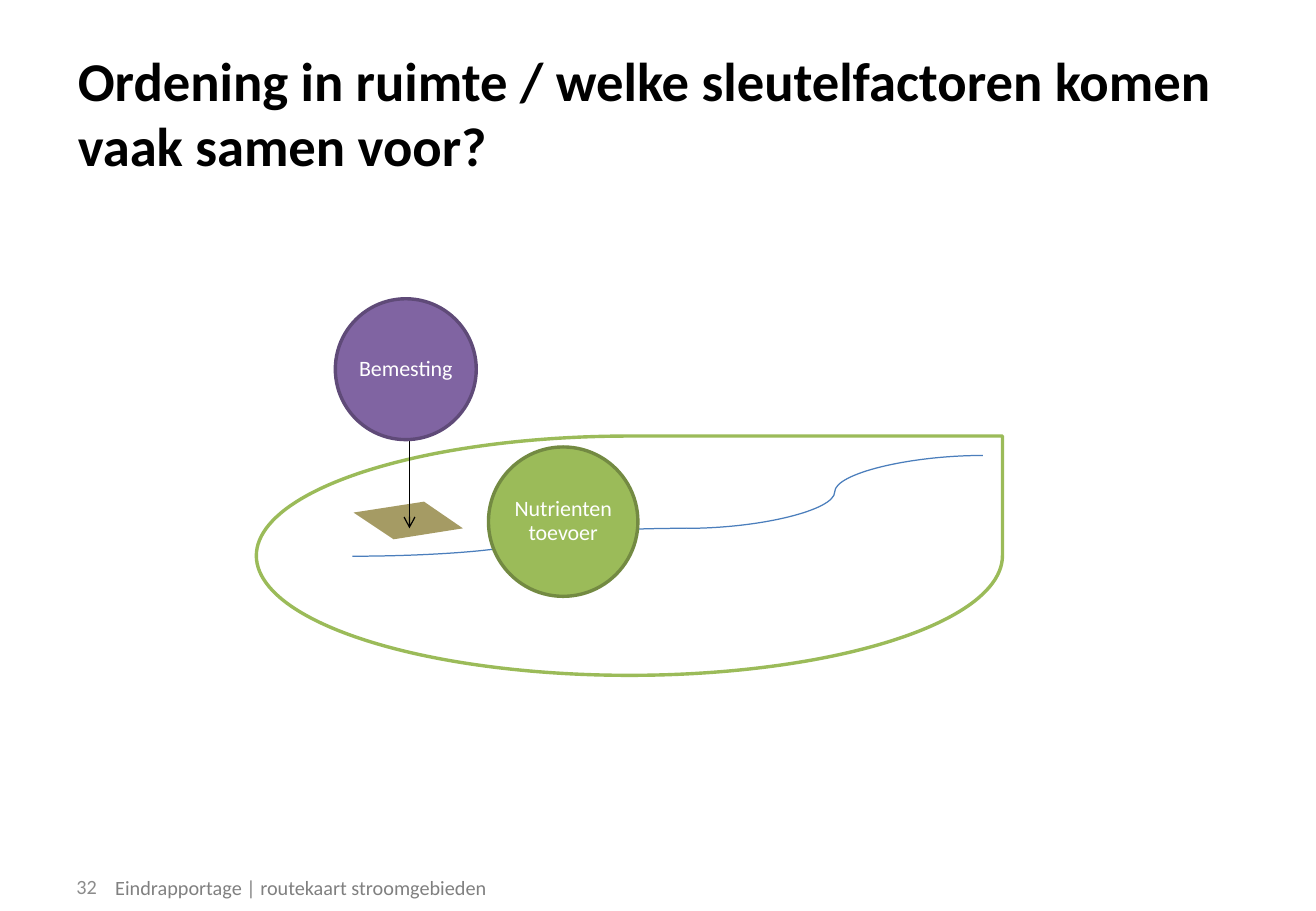
"""Build the slide on which key factors occur together in a catchment."""
from dataclasses import dataclass
from typing import Optional

from lxml.etree import SubElement
from pptx import Presentation
from pptx.dml.color import RGBColor
from pptx.enum.shapes import MSO_CONNECTOR, MSO_SHAPE
from pptx.enum.text import MSO_ANCHOR, MSO_AUTO_SIZE, PP_ALIGN
from pptx.oxml.ns import qn
from pptx.shapes.autoshape import Shape
from pptx.slide import Slide
from pptx.text.text import TextFrame
from pptx.util import Inches, Pt


@dataclass(frozen=True)
class Theme:
    font: str = "Calibri"
    head: float = 32.4
    label: float = 13
    small: float = 12
    thick: float = 2
    thin: float = 0.75
    black: str = "000000"
    white: str = "FFFFFF"
    green: str = "9BBB59"
    moss: str = "738A42"
    purple: str = "8064A2"
    plum: str = "5F4A78"
    blue: str = "4B7EBC"
    soil: str = "A59B64"
    gray: str = "808080"
    pale: str = "8C8C8C"


THEME = Theme()


@dataclass(frozen=True)
class Factor:
    text: str
    left: float
    top: float
    size: float
    fill: str
    edge: str


@dataclass(frozen=True)
class Link:
    kind: MSO_CONNECTOR
    start: tuple[float, float]
    end: tuple[float, float]
    color: str
    arrow: bool = False


@dataclass(frozen=True)
class Note:
    text: str
    left: float
    top: float
    width: float
    height: float
    color: str
    anchor: MSO_ANCHOR


FIELD = [(2.91, 4.22), (3.49, 4.13), (3.81, 4.35), (3.24, 4.44)]
LINKS = [
    Link(MSO_CONNECTOR.CURVE, (8.09, 3.75), (5.65, 4.35), THEME.blue),
    Link(MSO_CONNECTOR.CURVE, (2.9, 4.58), (5.65, 4.35), THEME.blue),
    Link(MSO_CONNECTOR.STRAIGHT, (3.37, 3.04), (3.37, 4.35), THEME.black, True),
]
FACTORS = [
    Factor("Bemesting", 2.76, 2.46, 1.16, THEME.purple, THEME.plum),
    Factor("Nutrienten toevoer", 4.02, 3.68, 1.23, THEME.green, THEME.moss),
]
NOTES = [
    Note("Eindrapportage | routekaart stroomgebieden", 0.85, 7.16, 3.94, 0.3,
         THEME.gray, MSO_ANCHOR.TOP),
    Note("32", 0.53, 7.1, 2.53, 0.4, THEME.pale, MSO_ANCHOR.MIDDLE),
]


def write(frame: TextFrame, text: str, size: float, color: str,
          align: PP_ALIGN = PP_ALIGN.LEFT, bold: bool = False) -> None:
    """Set the text of a frame and format its run."""
    frame.text = text
    frame.word_wrap = True
    para = frame.paragraphs[0]
    para.alignment = align
    font = para.runs[0].font
    font.name, font.size, font.bold = THEME.font, Pt(size), bold
    font.color.rgb = RGBColor.from_string(color)


def paint(shape: Shape, fill: str, edge: Optional[str] = None) -> None:
    """Give a shape a flat fill and an optional outline."""
    shape.shadow.inherit = False
    shape.fill.solid()
    shape.fill.fore_color.rgb = RGBColor.from_string(fill)
    if edge is None:
        shape.line.fill.background()
    else:
        shape.line.color.rgb = RGBColor.from_string(edge)
        shape.line.width = Pt(THEME.thick)


def add_title(slide: Slide, text: str) -> None:
    """Place the title in its placeholder."""
    title = slide.shapes.title
    title.left, title.top = Inches(0.54), Inches(0.3)
    title.width, title.height = Inches(9.75), Inches(1.25)
    frame = title.text_frame
    write(frame, text, THEME.head, THEME.black, bold=True)
    frame.auto_size = MSO_AUTO_SIZE.NONE
    frame.vertical_anchor = MSO_ANCHOR.MIDDLE


def add_basin(slide: Slide) -> None:
    """Draw the outline of the catchment."""
    basin = slide.shapes.add_shape(MSO_SHAPE.TEAR, Inches(2.11), Inches(3.59),
                                   Inches(6.14), Inches(1.97))
    paint(basin, THEME.white, THEME.green)


def add_field(slide: Slide) -> None:
    """Draw the farm field in perspective."""
    first, *rest = [(Inches(x), Inches(y)) for x, y in FIELD]
    pen = slide.shapes.build_freeform(*first)
    pen.add_line_segments(rest, close=True)
    paint(pen.convert_to_shape(), THEME.soil)


def add_link(slide: Slide, link: Link) -> None:
    """Draw a stream or an arrow."""
    ends = [Inches(value) for value in link.start + link.end]
    line = slide.shapes.add_connector(link.kind, *ends)
    line.line.color.rgb = RGBColor.from_string(link.color)
    line.line.width = Pt(THEME.thin)
    props = line._element.spPr
    if link.arrow:
        SubElement(props.find(qn("a:ln")), qn("a:tailEnd"), type="arrow")
    SubElement(props, qn("a:effectLst"))


def add_factor(slide: Slide, item: Factor) -> None:
    """Draw a key factor as a labelled circle."""
    size = Inches(item.size)
    disc = slide.shapes.add_shape(MSO_SHAPE.OVAL, Inches(item.left),
                                  Inches(item.top), size, size)
    paint(disc, item.fill, item.edge)
    frame = disc.text_frame
    write(frame, item.text, THEME.label, THEME.white, PP_ALIGN.CENTER)
    frame.paragraphs[0].line_spacing = 0.9
    frame.vertical_anchor = MSO_ANCHOR.MIDDLE
    frame.margin_left = frame.margin_right = Inches(0.01)
    frame.margin_top = frame.margin_bottom = Inches(0.01)


def add_note(slide: Slide, note: Note) -> None:
    """Add a line of footer text."""
    box = slide.shapes.add_textbox(Inches(note.left), Inches(note.top),
                                   Inches(note.width), Inches(note.height))
    write(box.text_frame, note.text, THEME.small, note.color)
    box.text_frame.vertical_anchor = note.anchor


def main() -> None:
    """Build and save the slide."""
    deck = Presentation()
    deck.slide_width, deck.slide_height = Inches(10.83), Inches(7.5)
    slide = deck.slides.add_slide(deck.slide_layouts[5])
    add_title(slide, "Ordening in ruimte / welke sleutelfactoren komen vaak samen voor?")
    add_basin(slide)
    add_field(slide)
    for link in LINKS:
        add_link(slide, link)
    for item in FACTORS:
        add_factor(slide, item)
    for note in NOTES:
        add_note(slide, note)
    deck.save("out.pptx")


if __name__ == "__main__":
    main()
